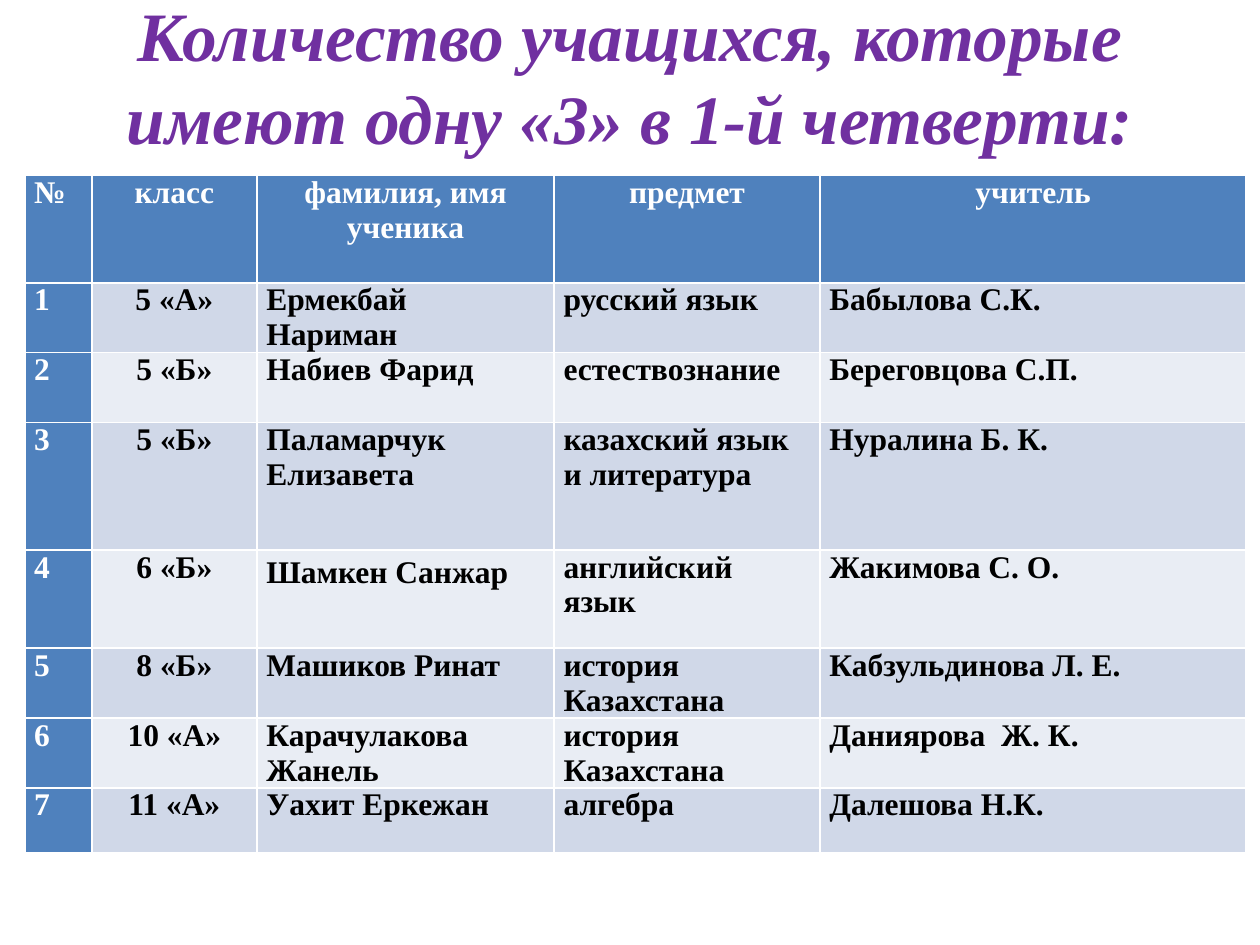
from pptx import Presentation
from pptx.dml.color import RGBColor
from pptx.enum.text import MSO_ANCHOR, MSO_AUTO_SIZE, PP_ALIGN as Align
from pptx.util import Cm, Pt

FONT = "Times New Roman"
PURPLE = RGBColor(0x70, 0x30, 0xA0)
BLUE = RGBColor(0x4F, 0x81, 0xBD)
BANDS = (RGBColor(0xD0, 0xD8, 0xE8), RGBColor(0xE9, 0xED, 0xF4))
WHITE = RGBColor(0xFF, 0xFF, 0xFF)
BLACK = RGBColor(0, 0, 0)

HEADING = "Количество учащихся, которые имеют одну «3» в 1-й четверти:"
HEADER = ("№", "класс", "фамилия, имя ученика", "предмет", "учитель")
PUPILS = (
    ("5 «А»", "Ермекбай Нариман", "русский язык", "Бабылова С.К."),
    ("5 «Б»", "Набиев Фарид", "естествознание", "Береговцова С.П."),
    ("5 «Б»", "Паламарчук Елизавета", "казахский язык и литература", "Нуралина Б. К."),
    ("6 «Б»", "Шамкен Санжар", "английский язык", "Жакимова С. О."),
    ("8 «Б»", "Машиков Ринат", "история Казахстана", "Кабзульдинова Л. Е."),
    ("10 «А»", "Карачулакова Жанель", "история Казахстана", "Даниярова  Ж. К."),
    ("11 «А»", "Уахит Еркежан", "алгебра", "Далешова Н.К."),
)
COLUMN_WIDTHS = (1.35, 3.33, 5.99, 5.36, 8.59)
ROW_HEIGHTS = (2.16, 1.3, 1.41, 2.57, 1.98, 1.3, 1.3, 1.3)
CLASS_COLUMN, NAME_COLUMN = 1, 2
LEFT_ALIGNED_ROWS = (2, 3)
LOOSE_CELL = (4, NAME_COLUMN)


def style_run(run, size, color, italic=False):
    font = run.font
    font.name, font.size = FONT, Pt(size)
    font.bold, font.italic = True, italic
    font.color.rgb = color


def add_heading(slide, left, top, width, height):
    heading = slide.shapes.title
    heading.left, heading.top, heading.width, heading.height = left, top, width, height
    frame = heading.text_frame
    frame.text = HEADING
    frame.word_wrap = True
    frame.auto_size = MSO_AUTO_SIZE.NONE
    frame.vertical_anchor = MSO_ANCHOR.MIDDLE
    frame.margin_bottom = Cm(1.8)  # lifts the two lines clear of the table
    paragraph = frame.paragraphs[0]
    paragraph.alignment = Align.CENTER
    style_run(paragraph.runs[0], 39.6, PURPLE, italic=True)


def cell_alignment(row, column):
    if column == CLASS_COLUMN or (row == 0 and column > 0):
        return Align.CENTER
    if column > 0 and row in LEFT_ALIGNED_ROWS:
        return Align.LEFT
    return Align.JUSTIFY


def fill_cell(cell, text, row, column):
    is_heading = row == 0 or column == 0
    cell.fill.solid()
    cell.fill.fore_color.rgb = BLUE if is_heading else BANDS[(row - 1) % 2]
    cell.margin_left = cell.margin_right = Cm(0.19)
    cell.margin_top = cell.margin_bottom = 0
    cell.text_frame.text = text
    paragraph = cell.text_frame.paragraphs[0]
    paragraph.alignment = cell_alignment(row, column)
    if (row, column) == LOOSE_CELL:
        paragraph.line_spacing = 1.15
    style_run(paragraph.runs[0], 18, WHITE if is_heading else BLACK)


def add_pupil_table(slide, left, top, width, height):
    rows = [HEADER] + [(str(n), *pupil) for n, pupil in enumerate(PUPILS, 1)]
    table = slide.shapes.add_table(
        len(rows), len(HEADER), left, top, width, height).table
    table.first_col = True
    for column, column_width in zip(table.columns, COLUMN_WIDTHS):
        column.width = Cm(column_width)
    for row, row_height in zip(table.rows, ROW_HEIGHTS):
        row.height = Cm(row_height)
    for r, texts in enumerate(rows):
        for c, text in enumerate(texts):
            fill_cell(table.cell(r, c), text, r, c)


def main():
    deck = Presentation()
    deck.slide_width, deck.slide_height = Cm(25.4), Cm(19.05)
    title_only = deck.slide_layouts[5]
    slide = deck.slides.add_slide(title_only)
    add_heading(slide, Cm(1.27), Cm(0.76), Cm(22.86), Cm(3.18))
    add_pupil_table(slide, Cm(0.5), Cm(3.54),
                    Cm(sum(COLUMN_WIDTHS)), Cm(sum(ROW_HEIGHTS)))
    deck.save("out.pptx")


if __name__ == "__main__":
    main()
